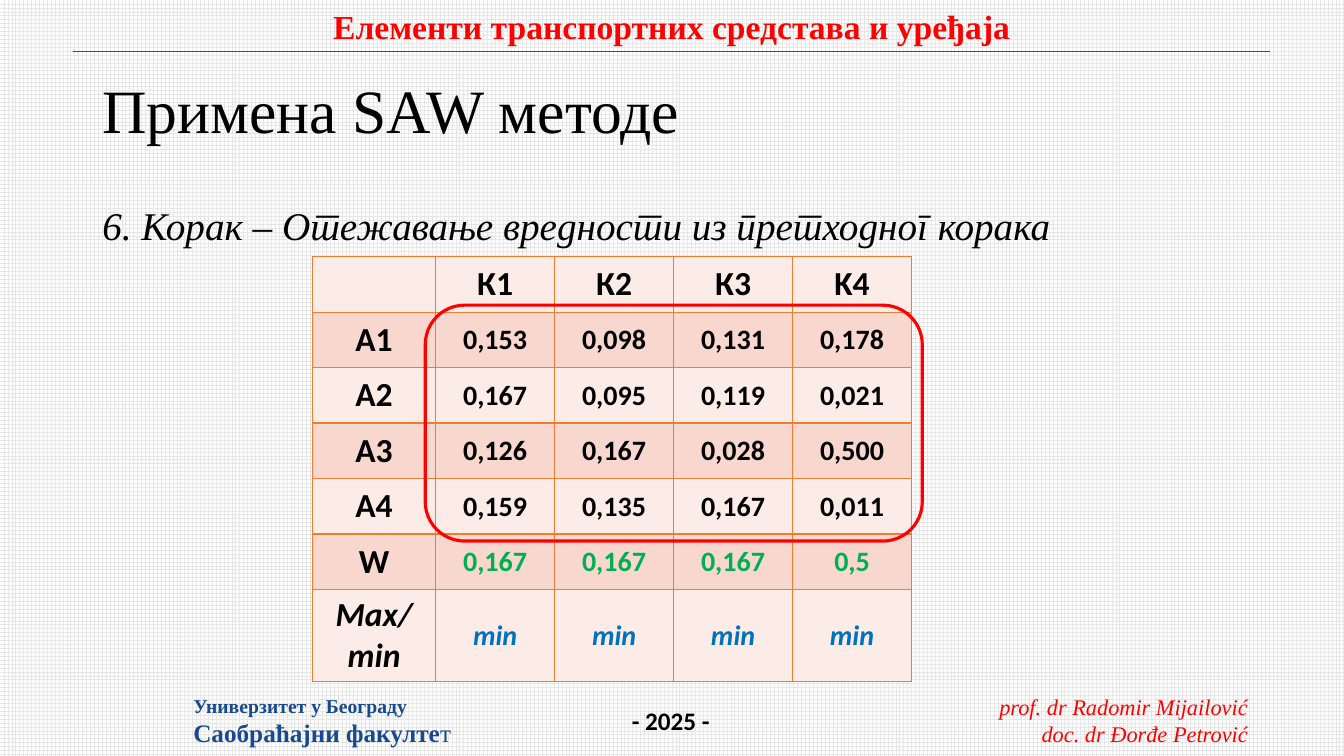
from lxml import etree
from pptx import Presentation
from pptx.dml.color import RGBColor
from pptx.enum.dml import MSO_PATTERN
from pptx.enum.shapes import MSO_CONNECTOR, MSO_SHAPE
from pptx.enum.text import MSO_ANCHOR, PP_ALIGN
from pptx.oxml.ns import qn
from pptx.util import Pt

GRID = MSO_PATTERN.LARGE_GRID
STRAIGHT = MSO_CONNECTOR.STRAIGHT
ROUNDED = MSO_SHAPE.ROUNDED_RECTANGLE
TOP, MIDDLE = MSO_ANCHOR.TOP, MSO_ANCHOR.MIDDLE
LEFT, CENTER, RIGHT = PP_ALIGN.LEFT, PP_ALIGN.CENTER, PP_ALIGN.RIGHT

SERIF, SANS = "Times New Roman", "Calibri"
RED, BLACK, NAVY = "FF0000", "000000", "16498E"
GREEN, BLUE, ORANGE = "00B050", "0070C0", "ED7D31"
BANDS = ["FCECE8", "F8D7CE"]

ROWS = [
    ["", "К1", "К2", "К3", "K4"],
    ["А1", "0,153", "0,098", "0,131", "0,178"],
    ["А2", "0,167", "0,095", "0,119", "0,021"],
    ["А3", "0,126", "0,167", "0,028", "0,500"],
    ["A4", "0,159", "0,135", "0,167", "0,011"],
    ["W", "0,167", "0,167", "0,167", "0,5"],
    ["Max/min", "min", "min", "min", "min"],
]
WEIGHT_ROW, GOAL_ROW = 5, 6


def rgb(color):
    """Turn a hex string into a colour."""
    return RGBColor.from_string(color)


def add_run(p, text, size, color=BLACK, font=SERIF, bold=False, italic=False):
    """Add one formatted run in Serbian to a paragraph."""
    r = p.add_run()
    r.text = text
    r.font.size, r.font.name = Pt(size), font
    r.font.bold, r.font.italic = bold, italic
    r.font.color.rgb = rgb(color)
    r._r.get_or_add_rPr().set("lang", "sr-Cyrl-RS")


def add_text(slide, box, lines, align=LEFT, wrap=False, spacing=None):
    """Add a text box whose lines are lists of (text, format) runs."""
    tf = slide.shapes.add_textbox(*map(Pt, box)).text_frame
    tf.word_wrap = wrap
    for i, runs in enumerate(lines):
        p = tf.add_paragraph() if i else tf.paragraphs[0]
        p.alignment, p.line_spacing = align, spacing
        for text, style in runs:
            add_run(p, text, **style)


def add_header(slide, box):
    """Add the course name with a rule under it."""
    x, y, w, h = box
    name = dict(size=24, color=RED, bold=True)
    line = slide.shapes.add_connector(STRAIGHT, Pt(x), Pt(y + h), Pt(x + w), Pt(y + h))
    line.line.color.rgb = rgb(RED)
    line.line.width = Pt(0.5)
    etree.SubElement(line._element.spPr, qn("a:effectLst"))
    add_text(slide, (x + 176.4, y, 503.3, h),
             [[("Елементи транспортних средстава и уређаја", name)]], CENTER)


def add_footer(slide, box):
    """Add the school, the year and the teachers."""
    x, y, w, h = box
    school = dict(size=18, color=NAVY, bold=True)
    teacher = dict(size=16, color=RED, italic=True)
    add_text(slide, (x, y, 200.9, h), [
        [("Универзитет у Београду", {**school, "size": 14})],
        [("Саобраћајни факулте", school), ("т", {**school, "bold": False})],
    ])
    add_text(slide, (x + 313.2, y + 8.6, 70.6, 28.8),
             [[("- 2025 -", dict(size=18, font=SANS, bold=True))]])
    add_text(slide, (x + w - 195.1, y, 195.1, h), [
        [("prof. dr Radomir Mijailović", teacher)],
        [("doc. dr Đorđe Petrović", teacher)],
    ], RIGHT)


def add_title(slide, box):
    """Fill and place the title placeholder."""
    sp = slide.shapes.title
    sp.left, sp.top, sp.width, sp.height = map(Pt, box)
    tf = sp.text_frame
    tf.vertical_anchor = MIDDLE
    p = tf.paragraphs[0]
    p.alignment, p.line_spacing = LEFT, 0.9
    add_run(p, "Примена SAW методе", 44)


def add_borders(cell, color, width):
    """Draw all four borders of a cell."""
    tcPr = cell._tc.get_or_add_tcPr()
    for side in ("a:lnL", "a:lnR", "a:lnT", "a:lnB"):
        ln = etree.SubElement(tcPr, qn(side), w=str(Pt(width)))
        fill = etree.SubElement(ln, qn("a:solidFill"))
        etree.SubElement(fill, qn("a:srgbClr"), val=color)


def add_weights(slide, box):
    """Add the weighted matrix and the frame round its values."""
    x, y, w, h = box
    label_w, row_h = 88, 39.6
    table = slide.shapes.add_table(len(ROWS), len(ROWS[0]), *map(Pt, box)).table
    table.first_row = table.horz_banding = False
    for j, col in enumerate(table.columns):
        col.width = Pt((w - label_w) / 4 if j else label_w)
    for i, row in enumerate(table.rows):
        row.height = Pt(h - 6 * row_h if i == GOAL_ROW else row_h)
        for j, text in enumerate(ROWS[i]):
            cell = table.cell(i, j)
            cell.vertical_anchor = MIDDLE
            add_borders(cell, ORANGE, 1)
            cell.fill.solid()
            cell.fill.fore_color.rgb = rgb(BANDS[i % 2])
            if j and 0 < i < WEIGHT_ROW:
                cell.margin_left = cell.margin_right = cell.margin_top = Pt(0.7)
                cell.margin_bottom = 0
            p = cell.text_frame.paragraphs[0]
            p.alignment = CENTER
            if text:
                color = {WEIGHT_ROW: GREEN, GOAL_ROW: BLUE}.get(i, BLACK) if j else BLACK
                add_run(p, text, 20 if i and j else 24, color, SANS, True, i == GOAL_ROW)
    frame = slide.shapes.add_shape(
        ROUNDED, Pt(x + label_w - 7.4), Pt(y + row_h - 5), Pt(355), Pt(168.5))
    frame.shadow.inherit = False
    frame.fill.background()
    frame.line.color.rgb = rgb(RED)
    frame.line.width = Pt(2.25)


def main():
    """Build the slide and save it."""
    prs = Presentation()
    prs.slide_width, prs.slide_height = Pt(960), Pt(540)
    slide = prs.slides.add_slide(prs.slide_layouts[5])
    fill = slide.background.fill
    fill.patterned()
    fill.pattern = GRID
    fill.fore_color.rgb, fill.back_color.rgb = rgb("E7E6E6"), rgb("FFFFFF")
    add_footer(slide, (131, 491.8, 767.5, 46))
    add_header(slide, (51.8, 0.7, 855.4, 36))
    add_title(slide, (66, 28.8, 828, 104.4))
    add_text(slide, (66, 144, 828, 342.7),
             [[("6. Корак – Отежавање вредности из претходног корака",
                dict(size=28, italic=True))]], wrap=True, spacing=0.9)
    add_weights(slide, (223.2, 183.4, 428, 303.6))
    prs.save("out.pptx")


if __name__ == "__main__":
    main()
